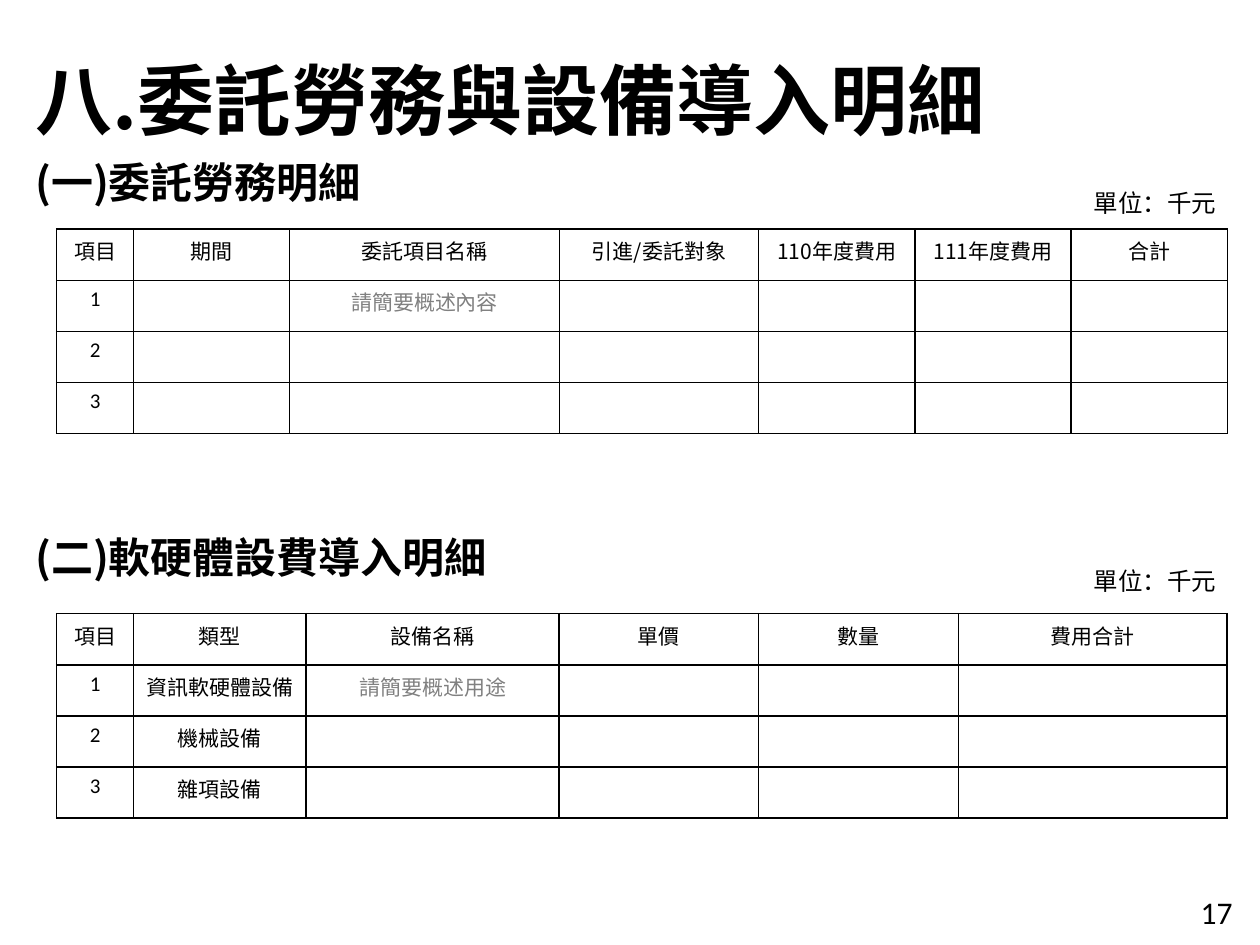
from pptx import Presentation
from pptx.dml.color import RGBColor
from pptx.enum.text import PP_ALIGN
from pptx.oxml import parse_xml
from pptx.oxml.ns import nsdecls
from pptx.util import Pt

BLACK = RGBColor(0, 0, 0)
GRAY = RGBColor(0x80, 0x80, 0x80)
CJK = "Noto Sans CJK SC"
LATIN = "Calibri"


def write(tf, text, size, name=CJK, color=BLACK, bold=False):
    p = tf.paragraphs[0]
    r = p.add_run()
    r.text = text
    for key, value in {"size": Pt(size), "name": name, "bold": bold}.items():
        setattr(r.font, key, value)
    r.font.color.rgb = color
    r.font.fill.fore_color.rgb = color
    r.font.name = name
    r.font._element.append(parse_xml(f'<a:ea {nsdecls("a")} typeface="{name}"/>'))
    return p


prs = Presentation()
prs.slide_width, prs.slide_height = Pt(720), Pt(540)
s = prs.slides.add_slide(prs.slide_layouts[6])

texts = [
    ("八.委託勞務與設備導入明細", 13, 0, 585.4, 77.8, 1.5, {"size": 44, "bold": True}),
    ("(一)委託勞務明細", 13, 85.7, 444, 36, 1, {"size": 24, "bold": True}),
    ("單位：千元", 617.8, 103.7, 89.3, 24.5, 1, {"size": 14}),
    ("(二)軟硬體設費導入明細", 13, 300.2, 444, 36, 1, {"size": 24, "bold": True}),
    ("單位：千元", 617.8, 319.7, 89.3, 24.5, 1, {"size": 14}),
    ("17", 679, 506.9, 41, 28.8, 1, {"size": 18, "name": LATIN}),
]
for text, x, y, w, h, spacing, fmt in texts:
    tf = s.shapes.add_textbox(Pt(x), Pt(y), Pt(w), Pt(h)).text_frame
    tf.word_wrap = True
    p = write(tf, text, **fmt)
    p.line_spacing = spacing

tables = [
    (131, [43.9, 89.3, 154.1, 113.8, 89.3, 89.3, 89.3], [
        ["項目", "期間", "委託項目名稱", "引進/委託對象", "110年度費用", "111年度費用", "合計"],
        ["1", "", "請簡要概述內容"],
        ["2"],
        ["3"],
    ]),
    (350.7, [43.9, 98.6, 144.7, 113.8, 114.5, 153.4], [
        ["項目", "類型", "設備名稱", "單價", "數量", "費用合計"],
        ["1", "資訊軟硬體設備", "請簡要概述用途"],
        ["2", "機械設備"],
        ["3", "雜項設備"],
    ]),
]
ROW_H = 29.2
for top, widths, rows in tables:
    table = s.shapes.add_table(len(rows), len(widths), Pt(32.4), Pt(top),
                               Pt(sum(widths)), Pt(ROW_H * len(rows))).table
    table.first_row = table.horz_banding = False
    for column, width in zip(table.columns, widths):
        column.width = Pt(width)
    for i, row in enumerate(rows):
        table.rows[i].height = Pt(ROW_H)
        for j in range(len(widths)):
            cell = table.cell(i, j)
            text = row[j] if j < len(row) else ""
            p = write(cell.text_frame, text, 12, LATIN if text.isdigit() else CJK,
                      GRAY if text.startswith("請") else BLACK)
            p.alignment = PP_ALIGN.CENTER
            tcPr = cell._tc.get_or_add_tcPr()
            for side in "LRTB":
                tcPr.append(parse_xml(
                    f'<a:ln{side} {nsdecls("a")} w="{Pt(1)}"><a:solidFill>'
                    f'<a:srgbClr val="{BLACK}"/></a:solidFill></a:ln{side}>'))
            cell.fill.background()

prs.save("out.pptx")
